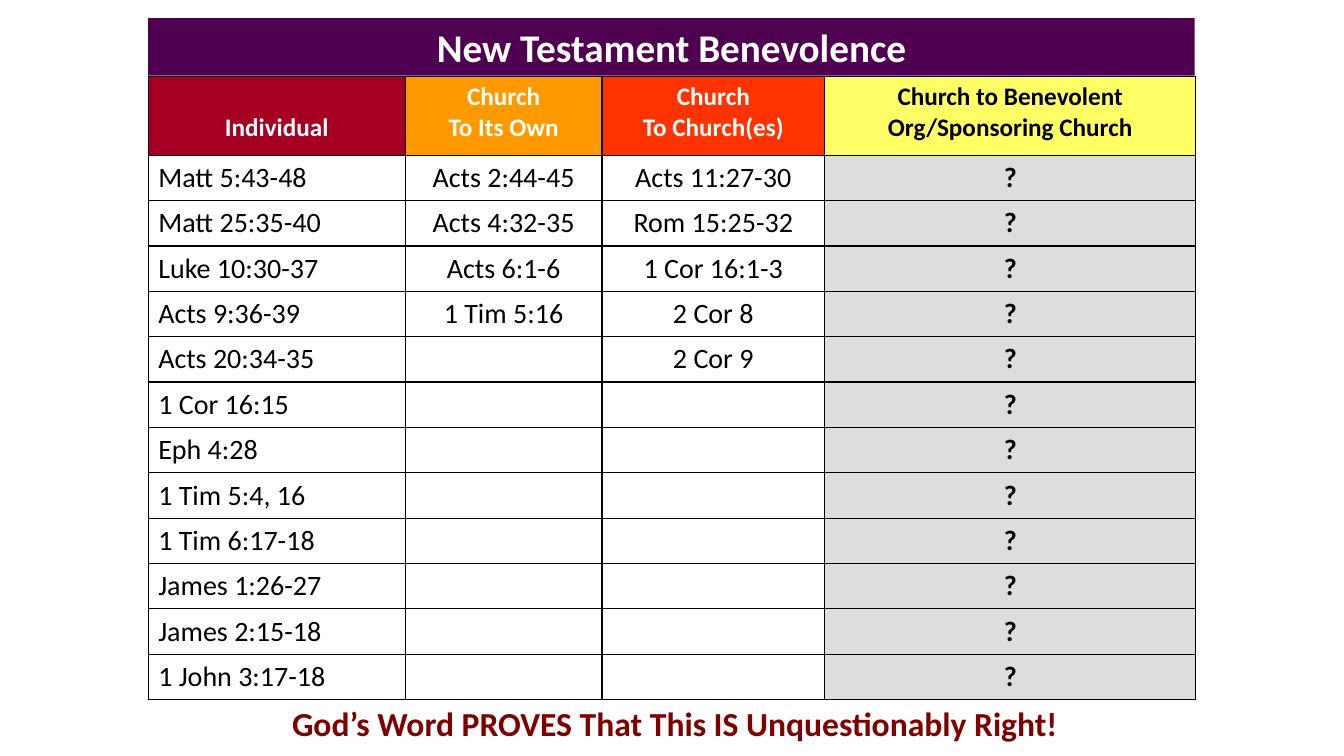
from dataclasses import dataclass

from lxml import etree
from pptx import Presentation
from pptx.dml.color import RGBColor
from pptx.enum.text import MSO_ANCHOR, PP_ALIGN
from pptx.oxml.ns import qn
from pptx.util import Inches, Pt

LEFT = PP_ALIGN.LEFT
CENTER = PP_ALIGN.CENTER
MIDDLE = MSO_ANCHOR.MIDDLE
BOTTOM = MSO_ANCHOR.BOTTOM
FONT = "Calibri"
BORDER_SIDES = ("a:lnL", "a:lnR", "a:lnT", "a:lnB")
TABLE_LEFT, TABLE_TOP, TABLE_WIDTH = 1.47, 0.76, 10.38
HEADER_HEIGHT, ROW_HEIGHT, PASSAGE_ROWS = 0.78, 0.45, 12


@dataclass(frozen=True)
class TextStyle:
    size: int
    color: str
    bold: bool = True
    alignment: PP_ALIGN = CENTER


@dataclass(frozen=True)
class Column:
    heading: str
    width: float
    heading_fill: str
    heading_color: str
    passages: tuple[str, ...]
    body_fill: str = "FFFFFF"
    bold: bool = False
    alignment: PP_ALIGN = CENTER


COLUMNS = (
    Column("Individual", 2.55, "A50021", "FFFFFF", (
        "Matt 5:43-48", "Matt 25:35-40", "Luke 10:30-37", "Acts 9:36-39",
        "Acts 20:34-35", "1 Cor 16:15", "Eph 4:28", "1 Tim 5:4, 16",
        "1 Tim 6:17-18", "James 1:26-27", "James 2:15-18", "1 John 3:17-18",
    ), alignment=LEFT),
    Column("Church\nTo Its Own", 1.95, "FF9900", "FFFFFF", (
        "Acts 2:44-45", "Acts 4:32-35", "Acts 6:1-6", "1 Tim 5:16",
    )),
    Column("Church\nTo Church(es)", 2.21, "FF3300", "FFFFFF", (
        "Acts 11:27-30", "Rom 15:25-32", "1 Cor 16:1-3", "2 Cor 8", "2 Cor 9",
    )),
    Column("Church to Benevolent Org/Sponsoring Church", 3.68, "FFFF66", "000000",
           ("?",) * PASSAGE_ROWS, body_fill="DDDDDD", bold=True),
)


def set_fill(fill, color: str) -> None:
    fill.solid()
    fill.fore_color.rgb = RGBColor.from_string(color)


def set_text(text_frame, text: str, style: TextStyle) -> None:
    text_frame.text = text
    text_frame.word_wrap = True
    for paragraph in text_frame.paragraphs:
        paragraph.alignment = style.alignment
        for run in paragraph.runs:
            run.font.name = FONT
            run.font.size = Pt(style.size)
            run.font.bold = style.bold
            run.font.color.rgb = RGBColor.from_string(style.color)


def add_borders(cell) -> None:
    properties = cell._tc.get_or_add_tcPr()
    for position, side in enumerate(BORDER_SIDES):
        line = etree.Element(qn(side), w=str(Pt(1)))
        solid_fill = etree.SubElement(line, qn("a:solidFill"))
        etree.SubElement(solid_fill, qn("a:srgbClr"), val="000000")
        properties.insert(position, line)


def format_cell(cell, text: str, fill: str, style: TextStyle) -> None:
    set_fill(cell.fill, fill)
    add_borders(cell)
    cell.vertical_anchor = MIDDLE
    if text:
        set_text(cell.text_frame, text, style)


def add_title(slide) -> None:
    title = slide.shapes.title
    title.left, title.top = Inches(TABLE_LEFT), Inches(0.18)
    title.width, title.height = Inches(TABLE_WIDTH), Inches(0.57)
    set_fill(title.fill, "500050")
    set_text(title.text_frame, "New Testament Benevolence", TextStyle(28, "FFFFFF"))
    title.text_frame.vertical_anchor = MIDDLE


def add_passage_table(slide) -> None:
    table = slide.shapes.add_table(
        PASSAGE_ROWS + 1, len(COLUMNS), Inches(TABLE_LEFT), Inches(TABLE_TOP),
        Inches(TABLE_WIDTH), Inches(HEADER_HEIGHT + PASSAGE_ROWS * ROW_HEIGHT),
    ).table
    table.first_row = False
    table.horz_banding = False
    for index, row in enumerate(table.rows):
        row.height = Inches(ROW_HEIGHT if index else HEADER_HEIGHT)

    for column_index, column in enumerate(COLUMNS):
        table.columns[column_index].width = Inches(column.width)
        heading = table.cell(0, column_index)
        format_cell(heading, column.heading, column.heading_fill,
                    TextStyle(18, column.heading_color))
        heading.vertical_anchor = BOTTOM
        heading.margin_bottom = Inches(0.12)
        body_style = TextStyle(20, "000000", column.bold, column.alignment)
        for row_index in range(PASSAGE_ROWS):
            has_passage = row_index < len(column.passages)
            passage = column.passages[row_index] if has_passage else ""
            format_cell(table.cell(row_index + 1, column_index), passage,
                        column.body_fill, body_style)


def add_conclusion(slide) -> None:
    conclusion = slide.shapes.add_textbox(
        Inches(1.53), Inches(6.92), Inches(10.33), Inches(0.5))
    set_text(conclusion.text_frame,
             "God’s Word PROVES That This IS Unquestionably Right!",
             TextStyle(24, "800000"))


def main() -> None:
    presentation = Presentation()
    presentation.slide_width = Inches(13.33)
    presentation.slide_height = Inches(7.5)
    slide = presentation.slides.add_slide(presentation.slide_layouts[5])
    set_fill(slide.background.fill, "FFFFFF")
    add_title(slide)
    add_passage_table(slide)
    add_conclusion(slide)
    presentation.save("out.pptx")


if __name__ == "__main__":
    main()
